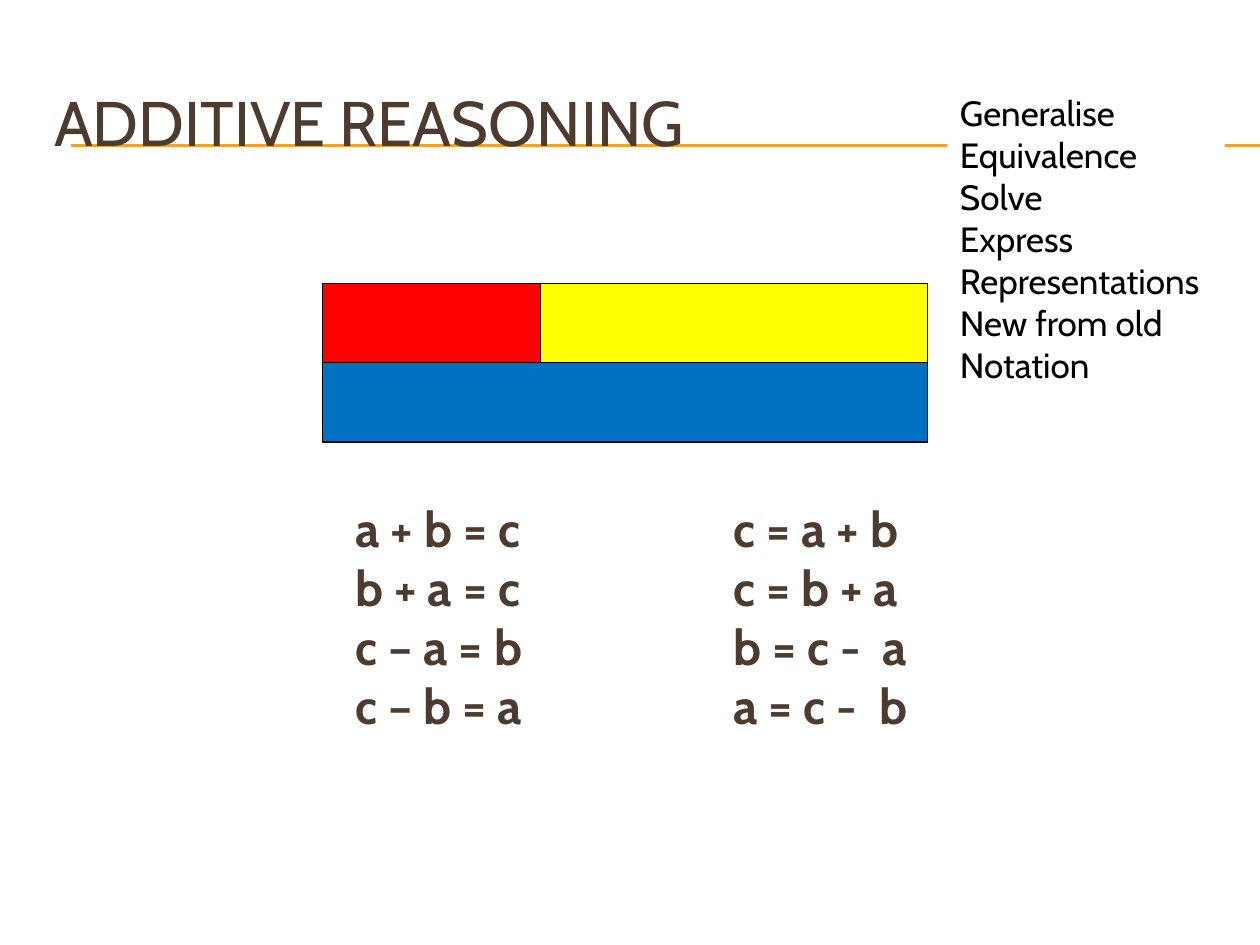
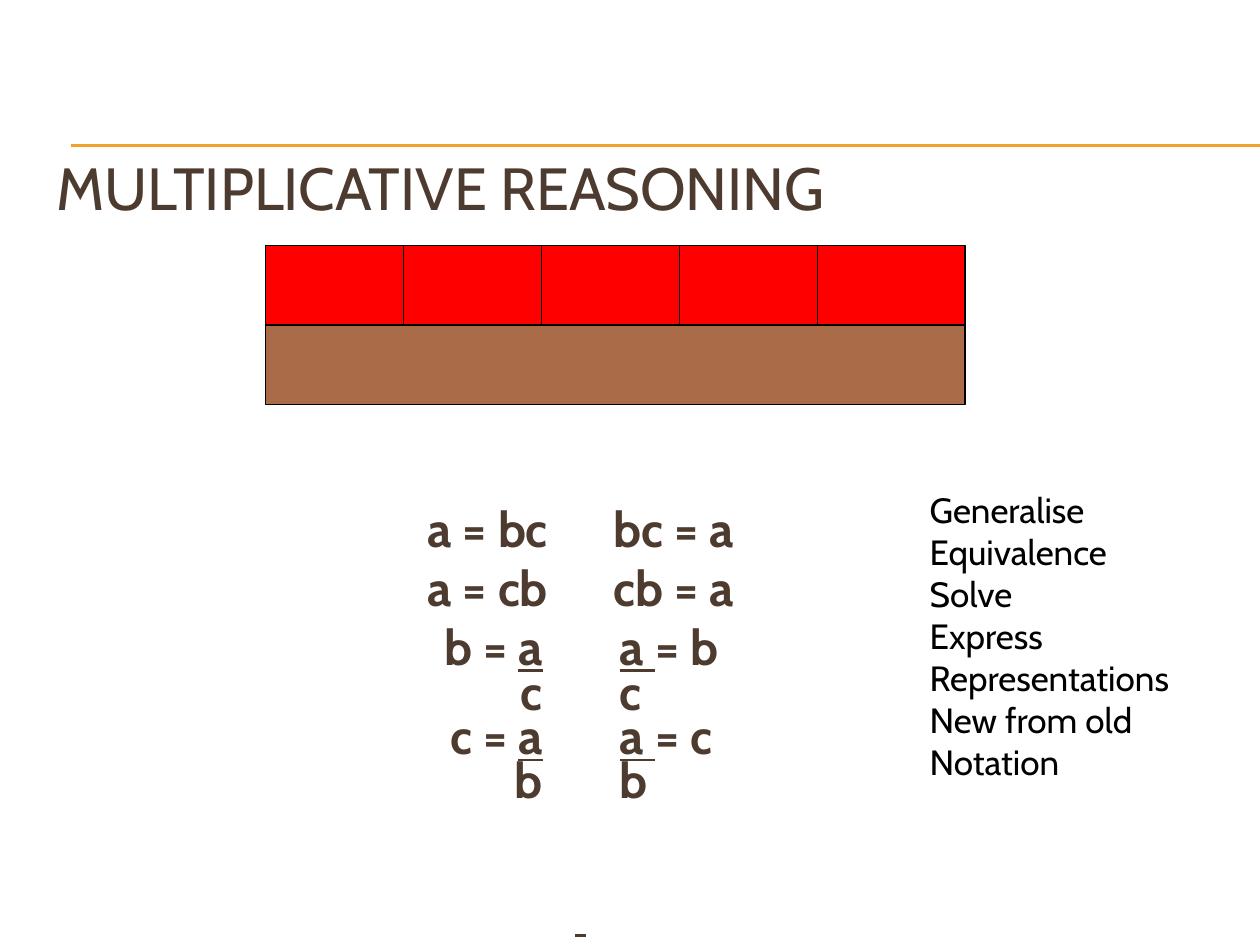
from collections import namedtuple
from dataclasses import dataclass

from lxml import etree
from pptx import Presentation
from pptx.dml.color import RGBColor as RGB
from pptx.enum.shapes import MSO_CONNECTOR as CONN, MSO_SHAPE as SHAPE
from pptx.enum.text import MSO_ANCHOR as ANCHOR, PP_ALIGN as ALIGN
from pptx.oxml.ns import qn
from pptx.util import Inches, Pt


@dataclass(frozen=True)
class Theme:
    font: str = "Cabin"
    ink: str = "4E3B30"
    rule: str = "F0A22E"
    black: str = "000000"
    white: str = "FFFFFF"
    red: str = "FF0000"
    yellow: str = "FFFF00"
    blue: str = "0070C0"
    brown: str = "AA6B48"
    equation_size: int = 28
    keyword_size: int = 20
    line_width: float = 0.75


THEME = Theme()
Box = namedtuple("Box", "left top width height")

BAR_HEIGHT = 0.63
KEYWORDS = ["Generalise", "Equivalence", "Solve", "Express",
            "Representations", "New from old", "Notation"]
# Tab stops: inches from the text edge, and the side the text aligns to
SUM_TABS = [(3, "l")]
WHOLE_TABS = [(2.14, "r"), (2.66, "l")]
FRACTION_TABS = [(2.1, "r"), (2.71, "l")]


def place(box):
    return [Inches(v) for v in box]


def style_run(r, size, color, bold=False):
    r.font.name = THEME.font
    r.font.size = Pt(size)
    r.font.bold = bold
    r.font.color.rgb = RGB.from_string(color)


def style_text(tf, size, color, bold=False):
    for p in tf.paragraphs:
        for r in p.runs:
            style_run(r, size, color, bold)


def set_tabs(p, tabs):
    tab_list = etree.SubElement(p._p.get_or_add_pPr(), qn("a:tabLst"))
    for pos, align in tabs:
        etree.SubElement(tab_list, qn("a:tab"), pos=str(Inches(pos)), algn=align)


def add_rules(slide):
    """Draw the double rule behind everything else on the slide."""
    for index, y in enumerate((1.15, 1.16)):
        line = slide.shapes.add_connector(
            CONN.STRAIGHT, Inches(0.56), Inches(y), Inches(10), Inches(y))
        line.line.color.rgb = RGB.from_string(THEME.rule)
        line.line.width = Pt(THEME.line_width)
        etree.SubElement(line._element.spPr, qn("a:effectLst"))
        slide.shapes._spTree.insert(2 + index, line._element)


def add_titled_slide(prs, title, box, size):
    slide = prs.slides.add_slide(prs.slide_layouts[5])
    add_rules(slide)
    sp = slide.shapes.title
    sp.left, sp.top, sp.width, sp.height = place(box)
    tf = sp.text_frame
    tf.text = title
    tf.vertical_anchor = ANCHOR.MIDDLE
    tf.paragraphs[0].alignment = ALIGN.LEFT
    style_text(tf, size, THEME.ink)
    return slide


def add_text_box(slide, box):
    sp = slide.shapes.add_textbox(*place(box))
    sp.text_frame.word_wrap = True
    return sp


def add_keywords(slide, left, top):
    sp = add_text_box(slide, Box(left, top, 2.2, 2.76))
    sp.fill.solid()
    sp.fill.fore_color.rgb = RGB.from_string(THEME.white)
    sp.text_frame.text = "\n".join(KEYWORDS)
    style_text(sp.text_frame, THEME.keyword_size, THEME.black)


def add_bar(shapes, left, top, width, color):
    sp = shapes.add_shape(SHAPE.RECTANGLE, *place(Box(left, top, width, BAR_HEIGHT)))
    sp.shadow.inherit = False
    sp.fill.solid()
    sp.fill.fore_color.rgb = RGB.from_string(color)
    sp.line.color.rgb = RGB.from_string(THEME.black)
    sp.line.width = Pt(THEME.line_width)


def add_sum_bars(slide, left, top, part_a, part_b):
    """Two parts side by side above a whole of the same length."""
    shapes = slide.shapes.add_group_shape().shapes
    add_bar(shapes, left, top, part_a, THEME.red)
    add_bar(shapes, left, top + BAR_HEIGHT, part_a + part_b, THEME.blue)
    add_bar(shapes, left + part_a, top, part_b, THEME.yellow)


def add_product_bars(slide, left, top, whole, count):
    """A row of overlapping parts above a whole; the last part closes the row."""
    part, last = 1.12, 1.17
    pitch = (whole - last) / (count - 1)
    add_bar(slide.shapes, left, top + BAR_HEIGHT, whole, THEME.brown)
    for i in range(count):
        width = part if i < count - 1 else last
        add_bar(slide.shapes, left + i * pitch, top, width, THEME.red)


def add_sum_equations(slide, box):
    tf = add_text_box(slide, box).text_frame
    tf.margin_left = Inches(1.1)
    tf.text = "\n".join(["a + b = c\tc = a + b",
                         "b + a = c\tc = b + a",
                         "c – a = b\tb = c -  a",
                         "c – b = a\ta = c -  b"])
    for p in tf.paragraphs:
        set_tabs(p, SUM_TABS)
    style_text(tf, THEME.equation_size, THEME.ink, bold=True)


def add_product_equations(slide, box):
    """Equations in two tabbed columns; underlined runs are numerators."""
    def fraction_line(letter):
        return [f"\t{letter} = ", ("a",), "\t", ("a ",), f"= {letter}"]

    lines = [
        (["\ta = bc\tbc = a"], WHOLE_TABS, 1.0),
        (["\ta = cb\tcb = a"], WHOLE_TABS, 1.0),
        (fraction_line("b"), FRACTION_TABS, 1.0),
        (["\tc\tc"], FRACTION_TABS, 0.75),
        (fraction_line("c"), FRACTION_TABS, 0.75),
        (["\tb\tb"], FRACTION_TABS, 0.75),
        ([(" ",)], None, 0.75),
    ]
    tf = add_text_box(slide, box).text_frame
    for i, (parts, tabs, spacing) in enumerate(lines):
        p = tf.add_paragraph() if i else tf.paragraphs[0]
        p.line_spacing = spacing
        if tabs:
            set_tabs(p, tabs)
        else:
            p.alignment = ALIGN.CENTER
            p.space_before = Pt(50)
        for part in parts:
            underlined = isinstance(part, tuple)
            r = p.add_run()
            r.text = part[0] if underlined else part
            style_run(r, THEME.equation_size, THEME.ink, bold=True)
            r.font.underline = underlined


def build_additive(prs):
    slide = add_titled_slide(prs, "ADDITIVE REASONING", Box(0.33, 0.5, 9.5, 0.92), 36)
    add_sum_bars(slide, 2.56, 2.25, 1.73, 3.07)
    add_sum_equations(slide, Box(1.72, 3.91, 7.19, 1.99))
    add_keywords(slide, 7.52, 0.68)


def build_multiplicative(prs):
    slide = add_titled_slide(prs, "MULTIPLICATIVE REASONING",
                             Box(0.35, 1.07, 8.58, 0.83), 34)
    add_product_bars(slide, 2.11, 1.95, 5.55, 5)
    add_product_equations(slide, Box(2.11, 3.91, 5, 4.7))
    add_keywords(slide, 7.28, 3.83)


def main():
    prs = Presentation()
    prs.slide_width, prs.slide_height = Inches(10), Inches(7.5)
    build_additive(prs)
    build_multiplicative(prs)
    prs.save("out.pptx")


if __name__ == "__main__":
    main()
